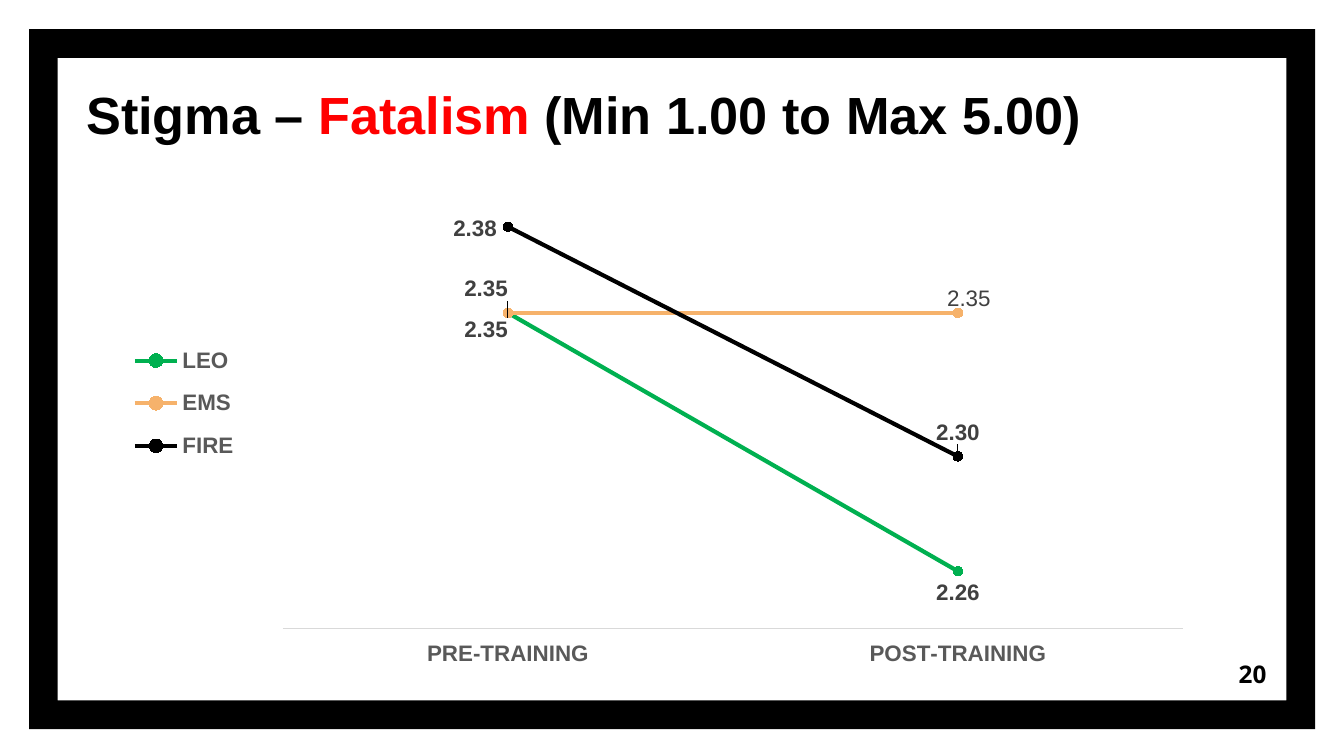
from dataclasses import dataclass

from lxml import etree
from pptx import Presentation
from pptx.chart.data import CategoryChartData
from pptx.dml.color import RGBColor as Color
from pptx.enum.chart import XL_CHART_TYPE as ChartType
from pptx.enum.chart import XL_LABEL_POSITION as LabelPosition
from pptx.enum.chart import XL_LEGEND_POSITION as LegendPosition
from pptx.enum.chart import XL_MARKER_STYLE as MarkerStyle
from pptx.enum.chart import XL_TICK_LABEL_POSITION as TickLabels
from pptx.enum.chart import XL_TICK_MARK as TickMark
from pptx.enum.shapes import MSO_SHAPE as Preset
from pptx.enum.text import MSO_ANCHOR as Anchor
from pptx.enum.text import MSO_AUTO_SIZE as AutoSize
from pptx.enum.text import PP_ALIGN as Align
from pptx.oxml.ns import qn
from pptx.util import Pt


@dataclass(frozen=True)
class Theme:
    font: str = "Arial"
    number_font: str = "Noto Sans"
    black: str = "000000"
    red: str = "FF0000"
    green: str = "00B050"
    orange: str = "F6B26B"
    axis_text: str = "595959"
    label_text: str = "404040"
    axis_line: str = "D9D9D9"
    title_size: int = 28
    number_size: int = 13
    chart_size: int = 12


theme = Theme()


def style(font, size, color, name=theme.font, bold=True):
    font.name = name
    font.size = Pt(size)
    font.bold = bold
    font.color.rgb = Color.from_string(color)


def place(parent, index, **values):
    for old in parent.findall(qn("c:layout")):
        parent.remove(old)
    layout = etree.Element(qn("c:layout"))
    manual = etree.SubElement(layout, qn("c:manualLayout"))
    for key, value in values.items():
        etree.SubElement(manual, qn(f"c:{key}")).set("val", str(value))
    parent.insert(index, layout)


deck = Presentation()
deck.slide_width = Pt(720)
deck.slide_height = Pt(405)
page = deck.slides.add_slide(deck.slide_layouts[5])

title = page.shapes.title
title.left, title.top, title.width, title.height = Pt(39), Pt(-6.5), Pt(651.5), Pt(91.5)

frame = page.shapes.add_shape(Preset.FRAME, Pt(15.6), Pt(15.6), Pt(689), Pt(375))
frame.adjustments[0] = 0.041
frame.shadow.inherit = False
frame.fill.solid()
frame.fill.fore_color.rgb = Color.from_string(theme.black)
frame.line.fill.background()
title.element.addprevious(frame.element)

number = page.shapes.add_textbox(Pt(642), Pt(345.5), Pt(43.5), Pt(31))
for box, anchor in ((title, Anchor.BOTTOM), (number, Anchor.MIDDLE)):
    text = box.text_frame
    text.word_wrap = True
    text.auto_size = AutoSize.NONE
    text.vertical_anchor = anchor
    text.margin_left = text.margin_right = Pt(7.2)
    text.margin_top = text.margin_bottom = Pt(7.2)

para = title.text_frame.paragraphs[0]
para.alignment = Align.LEFT
for words, color in (
    ("Stigma – ", theme.black),
    ("Fatalism ", theme.red),
    ("(Min 1.00 to Max 5.00)", theme.black),
):
    span = para.add_run()
    span.text = words
    style(span.font, theme.title_size, color)

para = number.text_frame.paragraphs[0]
para.text = "20"
para.alignment = Align.RIGHT
style(para.font, theme.number_size, theme.black, theme.number_font)

groups = (
    ("LEO", (2.35, 2.26), theme.green, ((-0.02, -0.01), (0, 0))),
    ("EMS", (2.35, 2.35), theme.orange, ((-0.02, -0.09), (0.01, -0.07))),
    ("FIRE", (2.38, 2.30), theme.black, ((-0.03, -0.04), (0, -0.09))),
)
data = CategoryChartData(number_format="0.00")
data.categories = ("PRE-TRAINING", "POST-TRAINING")
for name, values, color, offsets in groups:
    data.add_series(name, values)

chart = page.shapes.add_chart(
    ChartType.LINE_MARKERS, Pt(63.4), Pt(98), Pt(588), Pt(271.5), data
).chart
chart.has_title = False
style(chart.font, theme.chart_size, theme.axis_text)
chart.plots[0].vary_by_categories = False

values_axis = chart.value_axis
values_axis.minimum_scale = 2.24
values_axis.maximum_scale = 2.39
values_axis.has_major_gridlines = False
values_axis.visible = False

training_axis = chart.category_axis
training_axis.major_tick_mark = TickMark.NONE
training_axis.tick_label_position = TickLabels.LOW
training_axis.format.line.color.rgb = Color.from_string(theme.axis_line)
training_axis.format.line.width = Pt(0.75)
style(training_axis.tick_labels.font, theme.chart_size, theme.axis_text)

chart.has_legend = True
chart.legend.position = LegendPosition.LEFT
chart.legend.include_in_layout = False
style(chart.legend.font, theme.chart_size, theme.axis_text)

edges = {"xMode": "edge", "yMode": "edge"}
legend_part = chart.element.find(".//" + qn("c:legend"))
place(legend_part, 1, **edges, x=0.01, y=0.29, w=0.1, h=0.29)
plot_part = chart.element.find(".//" + qn("c:plotArea"))
place(plot_part, 0, layoutTarget="inner", **edges, x=0.15, y=0.03, w=0.82, h=0.85)

for series, (name, values, color, offsets) in zip(chart.plots[0].series, groups):
    paint = Color.from_string(color)
    series.smooth = False
    series.format.line.color.rgb = paint
    series.format.line.width = Pt(2.25)
    series.marker.style = MarkerStyle.CIRCLE
    series.marker.size = 5
    series.marker.format.fill.solid()
    series.marker.format.fill.fore_color.rgb = paint
    series.marker.format.line.color.rgb = paint
    for index in range(len(values)):
        label = series.points[index].data_label
        label.position = LabelPosition.BELOW
        bold = (name, index) != ("EMS", 1)
        style(label.font, theme.chart_size, theme.label_text, bold=bold)

shifts = [shift for group in groups for shift in group[3]]
for label_part, (x, y) in zip(chart.element.iter(qn("c:dLbl")), shifts):
    place(label_part, 1, x=x, y=y)

deck.save("out.pptx")
